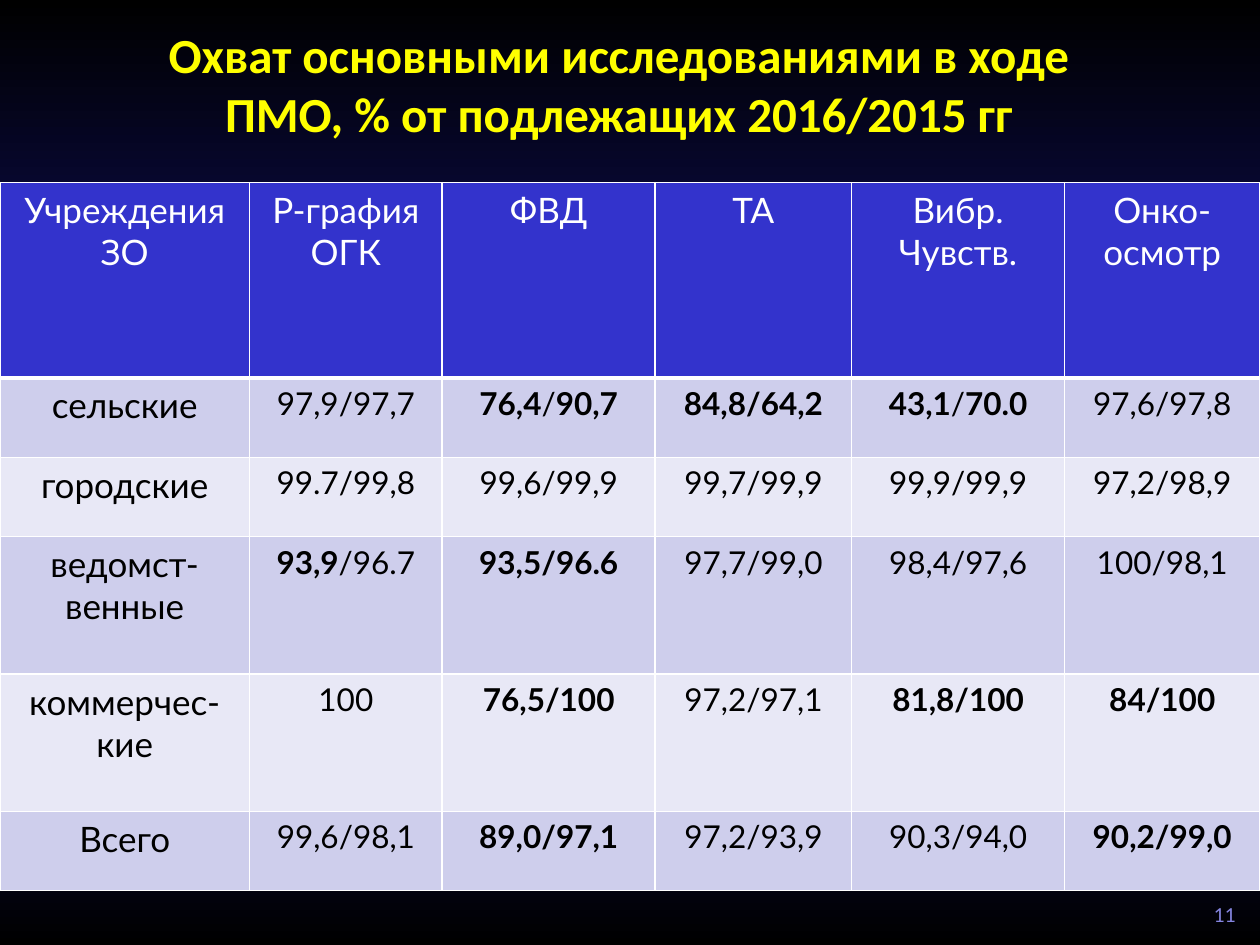
from pptx import Presentation
from pptx.dml.color import RGBColor
from pptx.enum.text import MSO_ANCHOR, PP_ALIGN
from pptx.oxml import parse_xml
from pptx.oxml.ns import nsdecls, qn
from pptx.util import Inches, Pt
from copy import deepcopy

CENTER, RIGHT = PP_ALIGN.CENTER, PP_ALIGN.RIGHT
MIDDLE, BOTTOM = MSO_ANCHOR.MIDDLE, MSO_ANCHOR.BOTTOM
TITLE_ONLY = 5
WIDTH, HEIGHT = 10, 7.5

COLORS = {
    "black": "000000",
    "navy": "14147E",
    "yellow": "FFFF00",
    "white": "FFFFFF",
    "header": "3333CC",
    "odd_row": "CECEEC",
    "even_row": "E8E8F6",
    "number": "8585E0",
}
BACKGROUND_STOPS = [(0, "black"), (0.53, "navy"), (1, "black")]

COLUMN_WIDTHS = [1.98, 1.53, 1.69, 1.56, 1.69, 1.55]
ROW_HEIGHTS = [1.55, 0.63, 0.63, 1.09, 1.09, 0.63]
BOLD_MARK = "*"
COVERAGE = [
    ["Учреждения ЗО", "Р-графия ОГК", "ФВД", "ТА", "Вибр.\nЧувств.", "Онко-\nосмотр"],
    ["сельские", "97,9/97,7", "*76,4*/*90,7*", "*84,8/64,2*", "*43,1*/*70.0*", "97,6/97,8"],
    ["городские", "99.7/99,8", "99,6/99,9", "99,7/99,9", "99,9/99,9", "97,2/98,9"],
    ["ведомст-венные", "*93,9*/96.7", "*93,5/96.6*", "97,7/99,0", "98,4/97,6", "100/98,1"],
    ["коммерчес-кие", "100", "*76,5/100*", "97,2/97,1", "*81,8/100*", "*84/100*"],
    ["Всего", "99,6/98,1", "*89,0/97,1*", "97,2/93,9", "90,3/94,0", "*90,2/99,0*"],
]


def rgb(name):
    return RGBColor.from_string(COLORS[name])


def format_run(run, size, color, font="Lato", bold=False):
    run.font.size = Pt(size)
    run.font.name = font
    run.font.bold = bold
    run.font.color.rgb = rgb(color)


def set_background(slide):
    fill = slide.background.fill
    fill.gradient()
    fill.gradient_angle = 270
    stop_list = slide.element.find(".//" + qn("a:gsLst"))
    stop_list.append(deepcopy(stop_list[-1]))
    for stop, (position, color) in zip(fill.gradient_stops, BACKGROUND_STOPS):
        stop.position = position
        stop.color.rgb = rgb(color)


def set_title(slide, text):
    title = slide.shapes.title
    title.left, title.top = Inches(1.06), Inches(0.4)
    title.width, title.height = Inches(7.7), Inches(0.53)
    frame = title.text_frame
    frame.text = text
    frame.word_wrap = True
    frame.vertical_anchor = MIDDLE
    frame.margin_left = frame.margin_right = 0
    frame.margin_top = frame.margin_bottom = 0
    paragraph = frame.paragraphs[0]
    paragraph.alignment = CENTER
    paragraph.line_spacing = 1
    format_run(paragraph.runs[0], 28, "yellow", "Calibri", True)


def set_borders(cell, widths):
    properties = cell._tc.get_or_add_tcPr()
    for side, width in widths.items():
        properties.append(parse_xml(
            f'<a:ln{side} {nsdecls("a")} w="{Pt(width)}"><a:solidFill>'
            f'<a:srgbClr val="{COLORS["white"]}"/></a:solidFill></a:ln{side}>'))


def fill_cell(cell, text, size, color, background):
    cell.fill.solid()
    cell.fill.fore_color.rgb = rgb(background)
    frame = cell.text_frame
    frame.text = text.replace(BOLD_MARK, "") if "\n" in text else ""
    if "\n" not in text:
        for index, part in enumerate(text.split(BOLD_MARK)):
            if part:
                run = frame.paragraphs[0].add_run()
                run.text = part
                format_run(run, size, color, bold=index % 2 == 1)
    else:
        for paragraph in frame.paragraphs:
            format_run(paragraph.runs[0], size, color)
    for paragraph in frame.paragraphs:
        paragraph.alignment = CENTER


def add_coverage_table(slide):
    table = slide.shapes.add_table(
        len(ROW_HEIGHTS), len(COLUMN_WIDTHS), 0, Inches(1.45),
        Inches(WIDTH), Inches(sum(ROW_HEIGHTS))).table
    for column, width in zip(table.columns, COLUMN_WIDTHS):
        column.width = Inches(width)
    for row, height in zip(table.rows, ROW_HEIGHTS):
        row.height = Inches(height)
    for row, texts in enumerate(COVERAGE):
        is_header = row == 0
        background = "header" if is_header else "odd_row" if row % 2 else "even_row"
        borders = {"L": 1, "R": 1, "T": 3 if row == 1 else 1, "B": 3 if is_header else 1}
        for column, text in enumerate(texts):
            cell = table.cell(row, column)
            set_borders(cell, borders)
            size = 20 if is_header or column == 0 else 18
            fill_cell(cell, text, size, "white" if is_header else "black", background)


def add_page_number(slide, number):
    box = slide.shapes.add_textbox(Inches(6.91), Inches(7), Inches(3), Inches(0.4))
    frame = box.text_frame
    frame.word_wrap = True
    frame.vertical_anchor = BOTTOM
    frame.text = number
    paragraph = frame.paragraphs[0]
    paragraph.alignment = RIGHT
    format_run(paragraph.runs[0], 11, "number")


def main():
    presentation = Presentation()
    presentation.slide_width = Inches(WIDTH)
    presentation.slide_height = Inches(HEIGHT)
    slide = presentation.slides.add_slide(presentation.slide_layouts[TITLE_ONLY])
    set_background(slide)
    set_title(slide, "Охват основными исследованиями в ходе ПМО, % от подлежащих 2016/2015 гг")
    add_coverage_table(slide)
    add_page_number(slide, "11")
    presentation.save("out.pptx")


if __name__ == "__main__":
    main()
